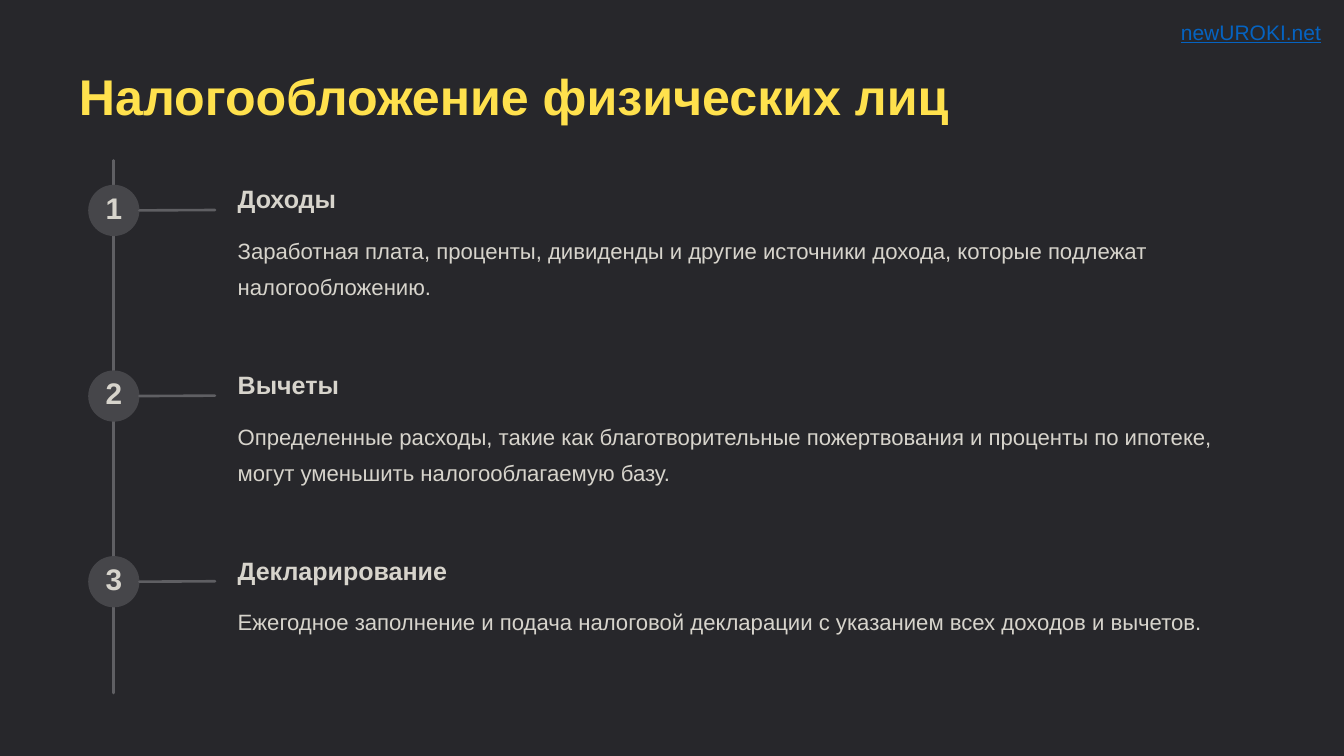
from lxml.etree import SubElement
from pptx import Presentation
from pptx.dml.color import RGBColor
from pptx.enum.shapes import MSO_CONNECTOR as Connector, MSO_SHAPE as Preset
from pptx.enum.text import MSO_ANCHOR as Anchor, MSO_AUTO_SIZE as AutoSize, PP_ALIGN as Align
from pptx.oxml.ns import qn
from pptx.util import Pt

EMU_PER_PX = 9144  # 100 px to the inch
FONT = "Arial"
BACKGROUND, YELLOW, LIGHT = "27272B", "FFE14D", "D7D4CC"
LINE_GRAY, BADGE_GRAY, LINK_BLUE = "5F5F63", "46464A", "0563C1"

FIRST_ROW, ROW_STEP = 220, 221
AXIS_X, BADGE_SIZE, BRANCH_END, TEXT_LEFT = 135, 61, 256, 283

STEPS = [
    ("Доходы", "Заработная плата, проценты, дивиденды и другие источники дохода, "
               "которые подлежат налогообложению."),
    ("Вычеты", "Определенные расходы, такие как благотворительные пожертвования "
               "и проценты по ипотеке, могут уменьшить налогооблагаемую базу."),
    ("Декларирование", "Ежегодное заполнение и подача налоговой декларации "
                       "с указанием всех доходов и вычетов."),
]


def px(*lengths):
    return [length * EMU_PER_PX for length in lengths]


def color(hex_string):
    return RGBColor.from_string(hex_string)


def write(shape, text, size, fill=LIGHT, bold=False, underline=False, spacing=None,
          align=Align.LEFT, anchor=Anchor.TOP, wrap=False, inset=(0, 0)):
    frame = shape.text_frame
    frame.auto_size = AutoSize.NONE
    frame.word_wrap = wrap
    frame.vertical_anchor = anchor
    frame.margin_left, frame.margin_top = px(*inset)
    frame.margin_right, frame.margin_bottom = px(*inset)
    frame.text = text
    paragraph = frame.paragraphs[0]
    paragraph.alignment = align
    if spacing:
        paragraph.line_spacing = Pt(spacing)
    font = paragraph.runs[0].font
    font.name, font.size = FONT, Pt(size)
    font.bold, font.underline = bold, underline
    font.color.rgb = color(fill)


def add_text(slide, box, text, size, **text_format):
    write(slide.shapes.add_textbox(*px(*box)), text, size, **text_format)


def add_line(slide, x1, y1, x2, y2):
    line = slide.shapes.add_connector(Connector.STRAIGHT, *px(x1, y1, x2, y2))
    line.line.width = Pt(2.25)
    line.line.color.rgb = color(LINE_GRAY)
    line.line._get_or_add_ln().set("cap", "rnd")
    SubElement(line._element.spPr, qn("a:effectLst"))
    return line


def add_badge(slide, top, number):
    left = AXIS_X - BADGE_SIZE // 2
    badge = slide.shapes.add_shape(
        Preset.ROUNDED_RECTANGLE, *px(left, top, BADGE_SIZE, BADGE_SIZE))
    badge.adjustments[0] = 0.5
    badge.shadow.inherit = False
    badge.fill.solid()
    badge.fill.fore_color.rgb = color(BADGE_GRAY)
    badge.line.fill.background()
    write(badge, str(number), 25.5, bold=True, spacing=25.5,
          align=Align.CENTER, anchor=Anchor.MIDDLE)
    return badge


def add_step(slide, number, heading, description):
    top = FIRST_ROW + (number - 1) * ROW_STEP
    badge = add_badge(slide, top, number)
    middle = top + BADGE_SIZE // 2
    branch = add_line(slide, AXIS_X + BADGE_SIZE // 2, middle, BRANCH_END, middle)
    branch.begin_connect(badge, 3)
    add_text(slide, (TEXT_LEFT, top - 3, 300, 38), heading, 21.5, bold=True, spacing=27)
    add_text(slide, (TEXT_LEFT, top + 51, 1222, 86), description, 19, spacing=31, wrap=True)


def add_title(slide, text):
    title = slide.shapes.title
    title.left, title.top, title.width, title.height = px(94, 74, 1123, 75)
    write(title, text, 43, fill=YELLOW, bold=True, spacing=54)


def main():
    presentation = Presentation()
    presentation.slide_width, presentation.slide_height = px(1600, 900)
    slide = presentation.slides.add_slide(presentation.slide_layouts[5])
    slide.background.fill.solid()
    slide.background.fill.fore_color.rgb = color(BACKGROUND)

    add_title(slide, "Налогообложение физических лиц")

    # Timeline: axis first, so the badges cover it
    add_line(slide, AXIS_X, 191, AXIS_X, 825)
    for number, (heading, description) in enumerate(STEPS, start=1):
        add_step(slide, number, heading, description)

    # Site address in the corner
    add_text(slide, (1396, 18, 188, 40), "newUROKI.net", 18, fill=LINK_BLUE,
             underline=True, inset=(10, 5))

    presentation.save("out.pptx")


if __name__ == "__main__":
    main()
